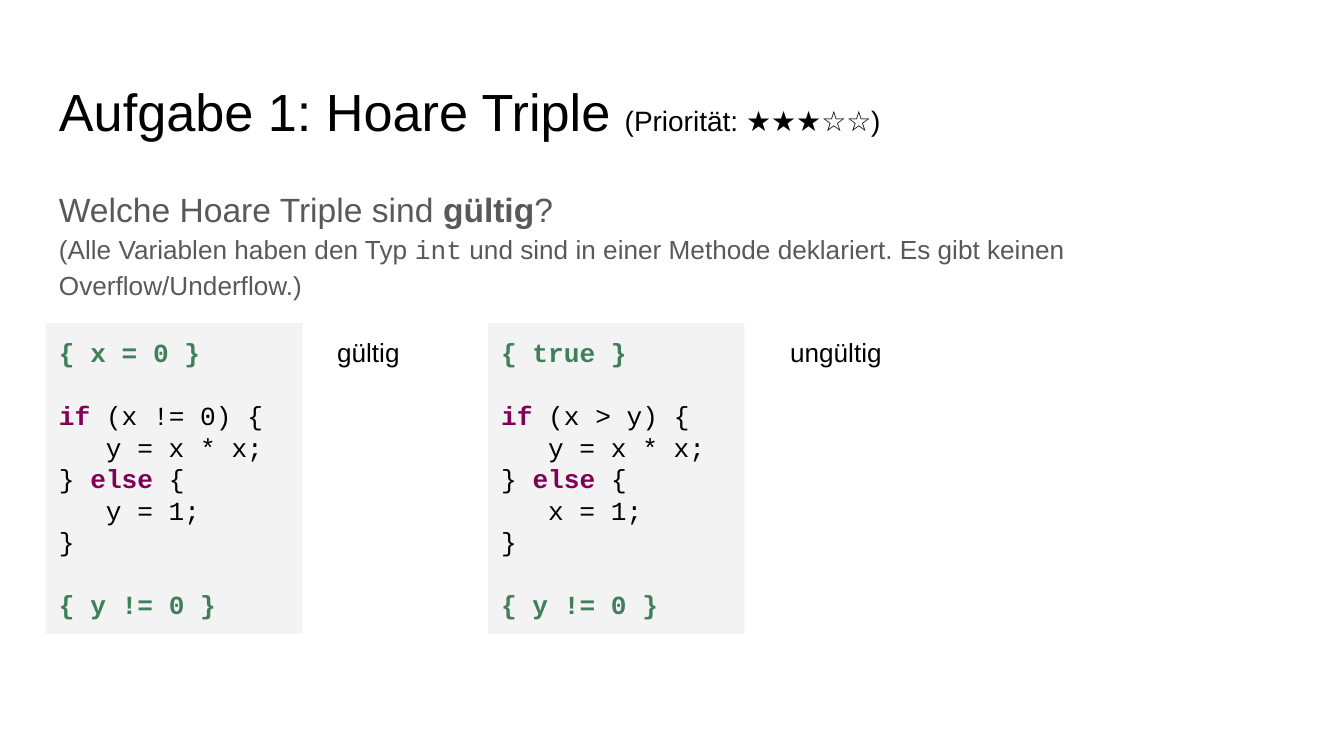
from pptx import Presentation, util as u
from pptx.dml.color import RGBColor
from pptx.enum import shapes, text

# 200 px to the inch
PX = 4572
BLACK = RGBColor(0x00, 0x00, 0x00)
GREY = RGBColor(0x59, 0x59, 0x59)
PANEL = RGBColor(0xF3, 0xF3, 0xF3)
GREEN = RGBColor(0x3F, 0x7F, 0x59)
PURPLE = RGBColor(0x7F, 0x00, 0x55)

INSET = 20
INDENT = 70
BLANK_LINE = u.Pt(17)

# Run formats: font attributes and colour
HEADING = ({"name": "Arial", "size": u.Pt(28)}, BLACK)
PRIORITY = ({"name": "Arial", "size": u.Pt(15)}, BLACK)
QUESTION = ({"name": "Arial", "size": u.Pt(18)}, GREY)
EMPHASIS = ({"name": "Arial", "size": u.Pt(18), "bold": True}, GREY)
NOTE = ({"name": "Arial", "size": u.Pt(14)}, GREY)
NOTE_CODE = ({"name": "Courier New", "size": u.Pt(14)}, GREY)
ANSWER = ({"name": "Arial", "size": u.Pt(14)}, BLACK)
CODE = ({"name": "Courier New", "size": u.Pt(14)}, BLACK)
KEYWORD = ({"name": "Courier New", "size": u.Pt(14), "bold": True}, PURPLE)
CONDITION = ({"name": "Courier New", "size": u.Pt(14), "bold": True}, GREEN)


def set_all(target, values):
    for attribute, value in values.items():
        setattr(target, attribute, value)


def emu(box):
    return [length * PX for length in box]


def prepare_frame(shape):
    frame = shape.text_frame
    set_all(frame, {
        "word_wrap": True,
        "vertical_anchor": text.MSO_ANCHOR.TOP,
        "margin_left": INSET * PX, "margin_right": INSET * PX,
        "margin_top": INSET * PX, "margin_bottom": INSET * PX,
    })
    return frame


def add_runs(paragraph, runs):
    for words, (font, colour) in runs:
        run = paragraph.add_run()
        run.text = words
        set_all(run.font, font)
        run.font.color.rgb = colour


def add_line(slide, box, runs):
    frame = prepare_frame(slide.shapes.add_textbox(*emu(box)))
    paragraph = frame.paragraphs[0]
    add_runs(paragraph, runs)
    return paragraph


def add_title(slide, box):
    add_line(slide, box, [("Aufgabe 1: Hoare Triple ", HEADING),
                          ("(Priorität: ★★★☆☆)", PRIORITY)])


def add_question(slide, box):
    question = add_line(slide, box, [("Welche Hoare Triple sind ", QUESTION),
                                     ("gültig", EMPHASIS), ("? ", QUESTION)])
    set_all(question, {"line_spacing": 1.15, "space_after": u.Pt(16)})
    question.add_line_break()
    add_runs(question, [
        ("(Alle Variablen haben den Typ ", NOTE),
        ("int", NOTE_CODE),
        (" und sind in einer Methode deklariert. "
         "Es gibt keinen Overflow/Underflow.)", NOTE),
    ])


def add_triple(slide, box, precondition, test, else_branch, answer, answer_left):
    left, top, width, height = box

    # Code panel
    panel = slide.shapes.add_shape(shapes.MSO_SHAPE.RECTANGLE, *emu(box))
    panel.shadow.inherit = False
    panel.fill.solid()
    panel.fill.fore_color.rgb = PANEL
    panel.line.fill.background()

    # Each line: indented or not, then its runs
    lines = [
        (False, [(precondition, CONDITION)]),
        (False, [("if", KEYWORD), (f" ({test}) {{", CODE)]),
        (True, [("y = x * x;", CODE)]),
        (False, [("} ", CODE), ("else", KEYWORD), (" {", CODE)]),
        (True, [(else_branch, CODE)]),
        (False, [("}", CODE)]),
        (False, [("{ y != 0 }", CONDITION)]),
    ]
    frame = prepare_frame(panel)
    for number, (indented, runs) in enumerate(lines):
        paragraph = frame.add_paragraph() if number else frame.paragraphs[0]
        paragraph.alignment = text.PP_ALIGN.LEFT
        if indented:
            paragraph._p.get_or_add_pPr().set("marL", str(INDENT * PX))
        add_runs(paragraph, runs)
    frame.paragraphs[0].space_after = BLANK_LINE
    frame.paragraphs[-1].space_before = BLANK_LINE

    # Verdict beside the panel
    add_line(slide, (left + answer_left, top, width, 106), [(answer, ANSWER)])


def main():
    deck = Presentation()
    set_all(deck, {"slide_width": 2000 * PX, "slide_height": 1125 * PX})
    slide = deck.slides.add_slide(deck.slide_layouts[6])

    add_title(slide, (68, 98, 1864, 126))
    add_question(slide, (68, 252, 1864, 216))
    add_triple(slide, (68, 481, 382, 462),
               "{ x = 0 }", "x != 0", "y = 1;", "gültig", 414)
    add_triple(slide, (726, 481, 382, 462),
               "{ true }", "x > y", "x = 1;", "ungültig", 430)

    deck.save("out.pptx")


if __name__ == "__main__":
    main()
